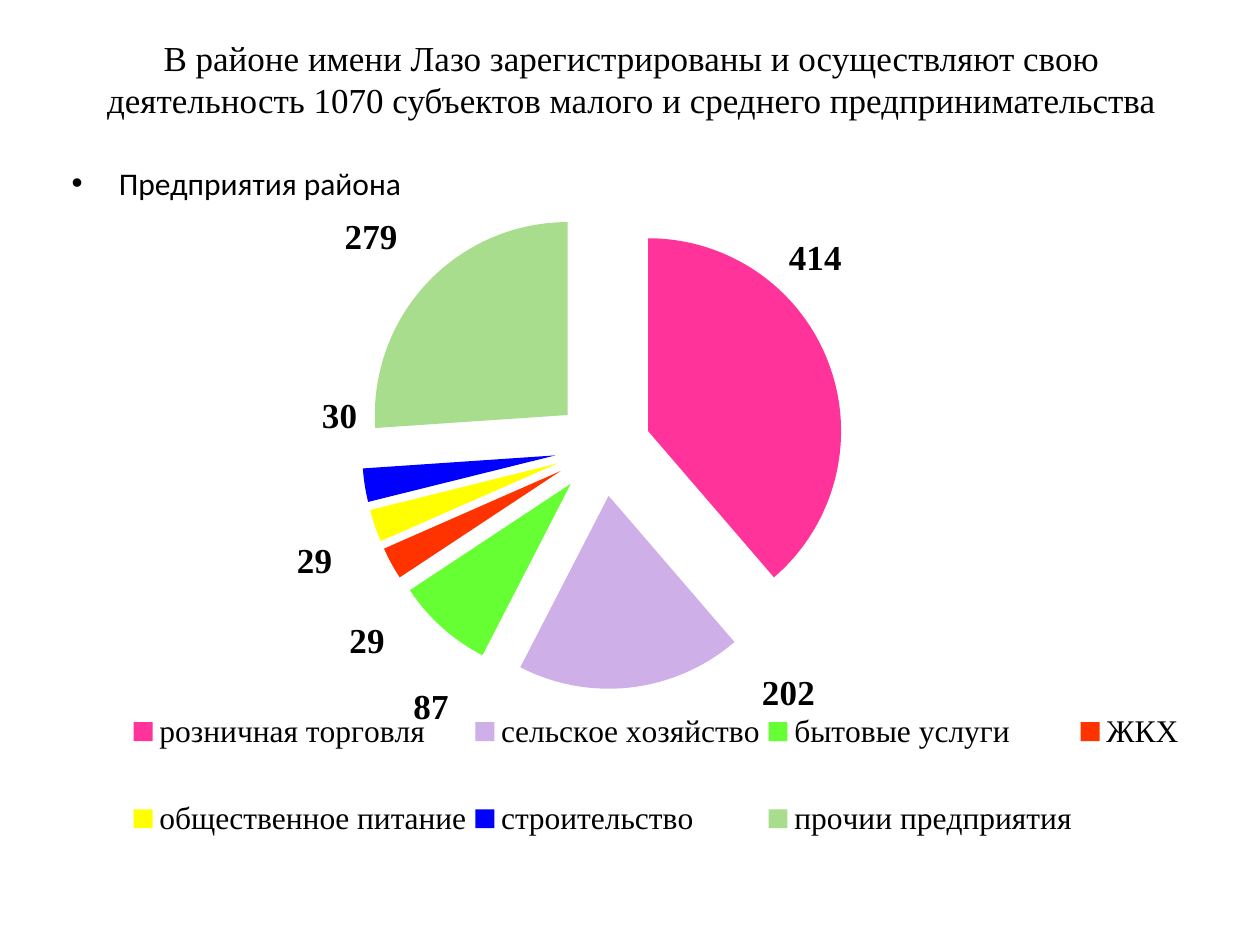
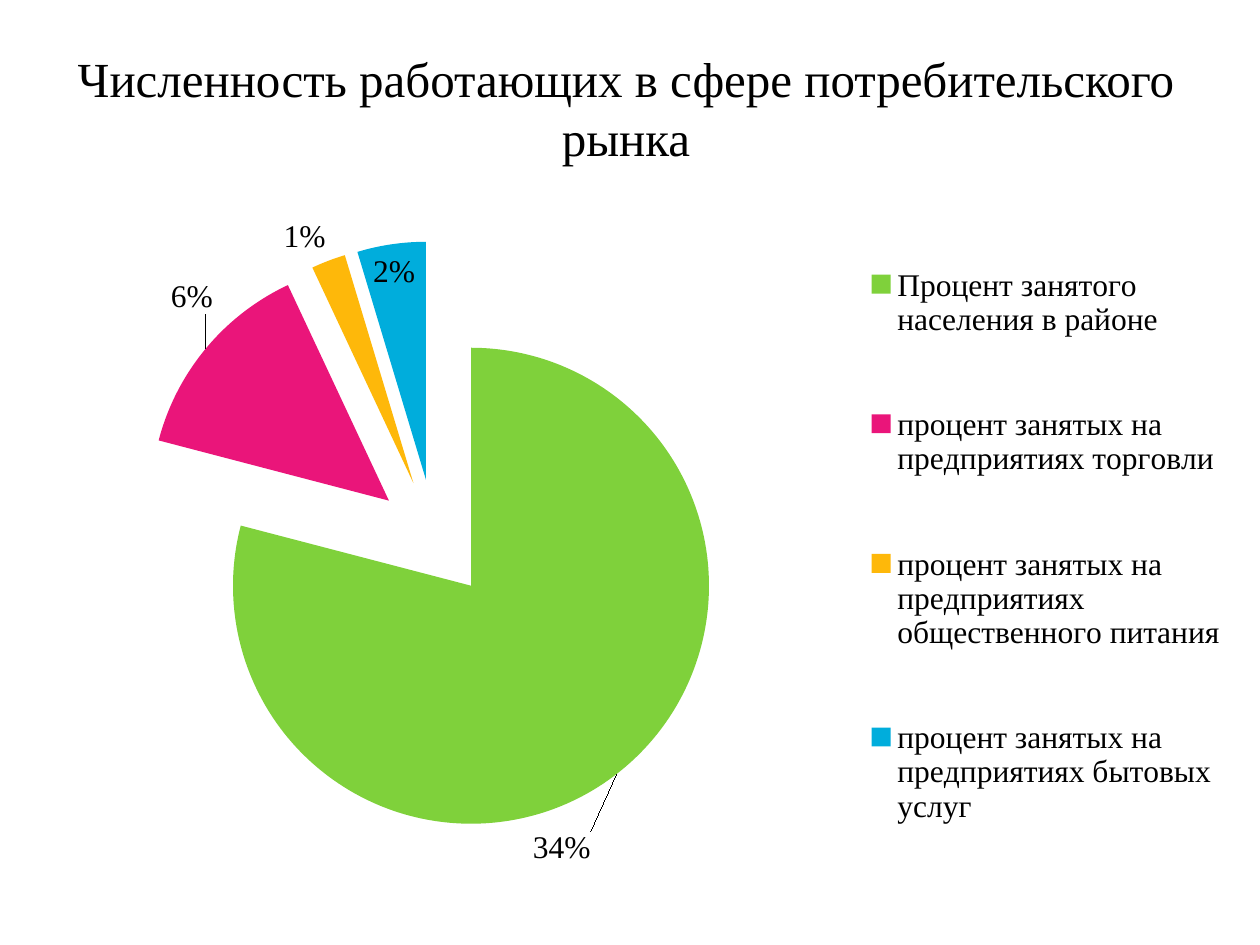
from pptx import Presentation
from pptx.chart.data import CategoryChartData
from pptx.dml.color import RGBColor
from pptx.enum.chart import XL_CHART_TYPE as Kind
from pptx.enum.chart import XL_LABEL_POSITION as Spot
from pptx.enum.chart import XL_LEGEND_POSITION as Side
from pptx.enum.text import MSO_ANCHOR as Anchor
from pptx.enum.text import PP_ALIGN as Align
from pptx.oxml import parse_xml
from pptx.oxml.ns import nsdecls
from pptx.util import Cm, Pt

HUES = {
    "ink": "000000", "rose": "FF3399", "lilac": "CFAFE7", "lime": "66FF33",
    "red": "FF3300", "yellow": "FFFF00", "blue": "0000FF", "mint": "A8DD8E",
    "green": "7FD13B", "pink": "EA157A", "amber": "FEB80A", "sky": "00ADDC",
}
SERIF, SANS = "Times New Roman", "Calibri"


def layout(x, y, w=None, h=None, inner=False):
    """Make a manual chart layout; without a size, x and y are offsets."""
    parts = [("layoutTarget", "inner")] if inner else []
    if w:
        parts += [("xMode", "edge"), ("yMode", "edge")]
    parts += [("x", x), ("y", y)]
    if w:
        parts += [("w", w), ("h", h)]
    body = "".join(f'<c:{tag} val="{val}"/>' for tag, val in parts)
    return parse_xml(f'<c:layout {nsdecls("c")}><c:manualLayout>{body}'
                     '</c:manualLayout></c:layout>')


class Deck:
    def __init__(self):
        self.prs = Presentation()
        self.prs.slide_width, self.prs.slide_height = Cm(25.4), Cm(19.05)
        self.slide = None

    def add(self, kind):
        self.slide = self.prs.slides.add_slide(self.prs.slide_layouts[kind])

    def font(self, font, size, face=SERIF, bold=False):
        font.name, font.size, font.bold = face, Pt(size), bold
        font.color.rgb = RGBColor.from_string(HUES["ink"])

    def fill(self, shape, box, text, size, face):
        shape.left, shape.top, shape.width, shape.height = map(Cm, box)
        frame = shape.text_frame
        frame.text = text
        self.font(frame.paragraphs[0].runs[0].font, size, face)
        return frame

    def title(self, text, left, top, size):
        box = (left, top, 22.86, 3.18)
        frame = self.fill(self.slide.shapes.title, box, text, size, SERIF)
        frame.vertical_anchor = Anchor.MIDDLE
        frame.paragraphs[0].alignment = Align.CENTER

    def body(self, text, box, size):
        self.fill(self.slide.placeholders[1], box, text, size, SANS)

    def pie(self, box, rows, plot, side, key, shifts, spot,
            form="General", size=18, bold=False, lines=True):
        """Draw an exploded pie; rows hold name, value and colour."""
        data = CategoryChartData(number_format=form)
        data.categories = [name for name, _, _ in rows]
        data.add_series("Series 1", [val for _, val, _ in rows])
        chart = self.slide.shapes.add_chart(
            Kind.PIE, *map(Cm, box), data).chart
        self.font(chart.font, 18)
        chart.has_title = False
        chart.has_legend = True
        legend = chart.legend
        legend.position, legend.include_in_layout = side, False
        self.font(legend.font, 18)
        legend._element.find("{*}legendPos").addnext(layout(*key))

        area = chart._chartSpace.chart.plotArea
        for old in area.findall("{*}layout"):
            area.remove(old)
        area.insert(0, layout(*plot, inner=True))

        pie = chart.plots[0]
        pie.vary_by_categories = True
        series = pie.series[0]
        series._element.find("{*}tx").addnext(
            parse_xml(f'<c:explosion {nsdecls("c")} val="25"/>'))
        for i, (_, _, hue) in enumerate(rows):
            paint = series.points[i].format.fill
            paint.solid()
            paint.fore_color.rgb = RGBColor.from_string(HUES[hue])
        self.labels(series, shifts, spot, form, size, bold, lines)

    def labels(self, series, shifts, spot, form, size, bold, lines):
        marks = series.data_labels
        marks.show_value, marks.position = True, spot
        marks.number_format, marks.number_format_is_linked = form, False
        self.font(marks.font, size, bold=bold)
        for i in range(len(shifts)):
            mark = series.points[i].data_label
            self.font(mark.font, size, bold=bold)
            mark.position = spot
        root = marks._element
        for node, shift in zip(root.findall("{*}dLbl"), shifts):
            node.find("{*}idx").addnext(layout(*shift))
        for node in root.findall("{*}showLeaderLines"):
            node.set("val", str(int(lines)))


def main():
    deck = Deck()

    deck.add(1)
    deck.title("В районе имени Лазо зарегистрированы и осуществляют свою "
               "деятельность 1070 субъектов малого и среднего "
               "предпринимательства", 1.3, 0, 20)
    deck.body("Предприятия района", (1.19, 3.18, 22.86, 13.64), 18)
    firms = [
        ("розничная торговля", 414, "rose"),
        ("сельское хозяйство", 202, "lilac"),
        ("бытовые услуги", 87, "lime"),
        ("ЖКХ", 29, "red"),
        ("общественное питание", 29, "yellow"),
        ("строительство", 30, "blue"),
        ("прочии предприятия", 279, "mint"),
    ]
    shifts = [(-0.04, -0.12), (0.11, -0.03), (0.01, 0.08), (0, 0.08),
              (-0.03, 0.02), (0, -0.13), (-0.02, -0.03)]
    deck.pie((1.09, 4.17, 23.8, 13.89), firms, (0.04, 0, 0.85, 0.7),
             Side.BOTTOM, (0.06, 0.66, 0.9, 0.33), shifts, Spot.OUTSIDE_END,
             size=20, bold=True, lines=False)

    deck.add(5)
    deck.title("Численность работающих в сфере потребительского рынка",
               1.19, 0.58, 28)
    staff = [
        ("Процент занятого населения в районе", 0.34, "green"),
        ("процент занятых на предприятиях торговли", 0.06, "pink"),
        ("процент занятых на предприятиях общественного питания",
         0.01, "amber"),
        ("процент занятых на предприятиях бытовых услуг", 0.02, "sky"),
    ]
    deck.pie((0, 3.53, 25.4, 14.81), staff, (0.07, 0.09, 0.55, 0.81),
             Side.RIGHT, (0.68, 0.03, 0.3, 0.95),
             [(-0.07, 0.07), (0.01, -0.04)], Spot.BEST_FIT, form="0%")

    deck.prs.save("out.pptx")


if __name__ == "__main__":
    main()
